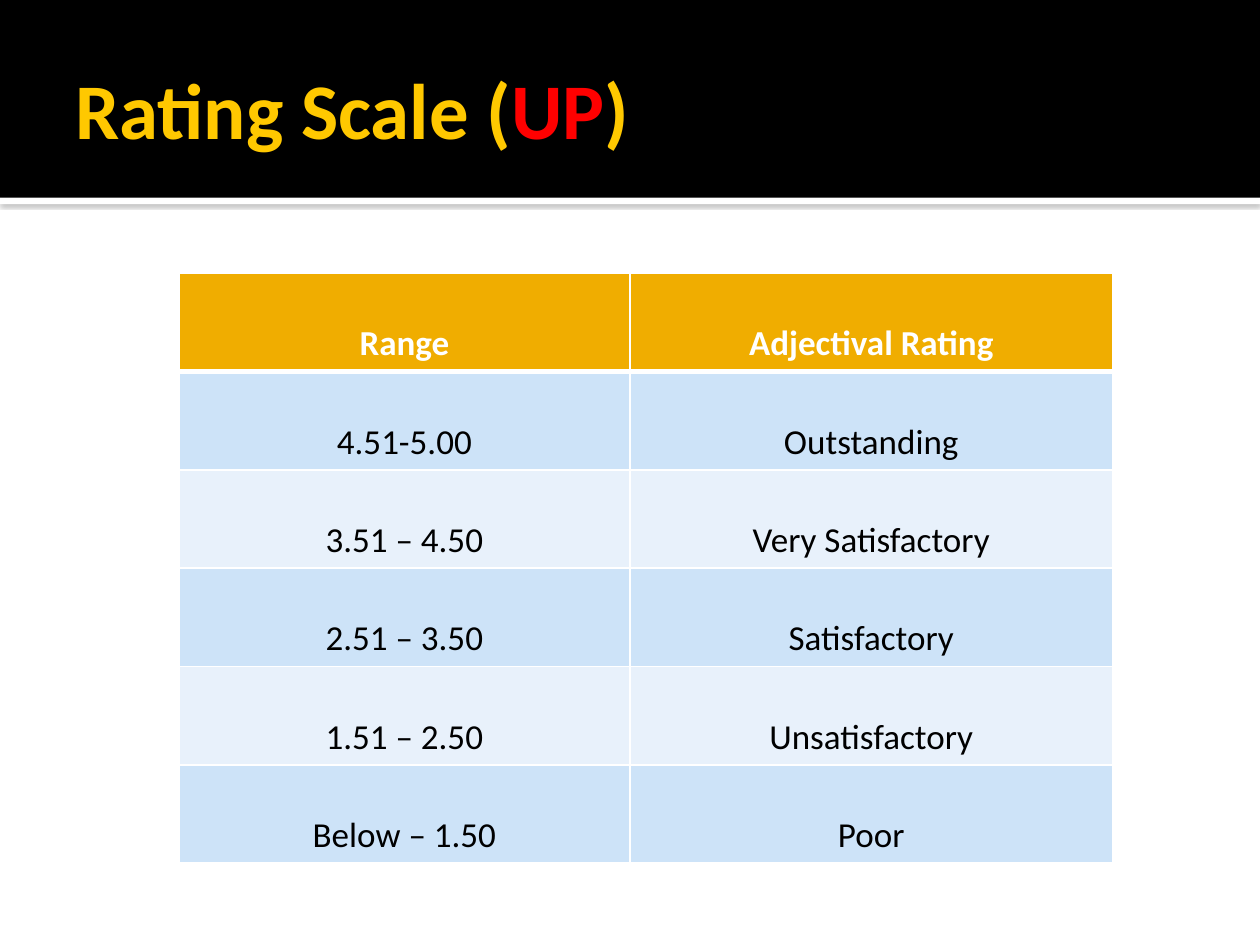
from dataclasses import dataclass

from lxml.etree import SubElement
from pptx import Presentation
from pptx.dml.color import RGBColor
from pptx.enum.shapes import MSO_SHAPE
from pptx.enum.text import MSO_ANCHOR, PP_ALIGN
from pptx.oxml.ns import qn
from pptx.util import Inches, Pt


@dataclass(frozen=True)
class Theme:
    font: str = "Calibri"
    title_size: int = 45
    cell_size: int = 20
    white: str = "FFFFFF"
    black: str = "000000"
    title: str = "FFC800"
    accent: str = "FF0000"
    header: str = "F0AD00"
    bands: tuple = ("CDE3F8", "E8F1FB")
    shadow: str = "808080"


THEME = Theme()
RATINGS = [
    ("Range", "Adjectival Rating"),
    ("4.51-5.00", "Outstanding"),
    ("3.51 – 4.50", "Very Satisfactory"),
    ("2.51 – 3.50", "Satisfactory"),
    ("1.51 – 2.50", "Unsatisfactory"),
    ("Below – 1.50", "Poor"),
]


def rgb(value):
    """Return the colour for a hex string."""
    return RGBColor.from_string(value)


def set_font(font, size, color, bold):
    """Apply the theme font with a size, colour and weight."""
    font.name = THEME.font
    font.size = Pt(size)
    font.color.rgb = rgb(color)
    font.bold = bold


def add_color(parent, color):
    """Append an RGB colour element and return it."""
    return SubElement(parent, qn("a:srgbClr"), val=color)


def add_band(slide, top, height, color):
    """Add a full-width rectangle without outline or shadow."""
    sp = slide.shapes.add_shape(
        MSO_SHAPE.RECTANGLE, 0, Inches(top), Inches(10), Inches(height))
    sp.shadow.inherit = False
    sp.fill.solid()
    sp.fill.fore_color.rgb = rgb(color)
    sp.line.fill.background()
    return sp


def add_shadow(sp):
    """Give a shape a soft shadow falling downwards."""
    effects = sp._element.spPr.find(qn("a:effectLst"))
    shadow = SubElement(
        effects, qn("a:outerShdw"), blurRad=str(Pt(2.5)), dist=str(Pt(0.8)),
        dir="5400000", algn="tl", rotWithShape="0")
    SubElement(add_color(shadow, THEME.shadow), qn("a:alpha"), val="60000")


def add_title(slide, parts):
    """Add the heading from (text, colour) parts."""
    box = slide.shapes.add_textbox(
        Inches(0.5), Inches(0.17), Inches(9), Inches(1.37))
    tf = box.text_frame
    tf.word_wrap = True
    tf.vertical_anchor = MSO_ANCHOR.MIDDLE
    tf.margin_right = Inches(0.05)
    p = tf.paragraphs[0]
    for text, color in parts:
        r = p.add_run()
        r.text = text
        set_font(r.font, THEME.title_size, color, True)


def set_borders(cell, top, bottom):
    """Draw white cell borders with the given top and bottom widths."""
    tc_pr = cell._tc.get_or_add_tcPr()
    for side, width in (("L", 1), ("R", 1), ("T", top), ("B", bottom)):
        ln = SubElement(tc_pr, qn(f"a:ln{side}"), w=str(Pt(width)))
        add_color(SubElement(ln, qn("a:solidFill")), THEME.white)


def fill_cell(cell, text, row):
    """Write and style one cell according to its row."""
    is_header = row == 0
    set_borders(cell, 3 if row == 1 else 1, 3 if is_header else 1)
    cell.fill.solid()
    cell.fill.fore_color.rgb = rgb(
        THEME.header if is_header else THEME.bands[(row - 1) % 2])
    cell.vertical_anchor = MSO_ANCHOR.BOTTOM
    cell.text = text
    p = cell.text_frame.paragraphs[0]
    p.alignment = PP_ALIGN.CENTER
    set_font(p.font, THEME.cell_size,
             THEME.white if is_header else THEME.black, is_header)


def add_rating_table(slide, rows, widths, row_height):
    """Add the rating table with a header and banded rows."""
    table = slide.shapes.add_table(
        len(rows), len(widths), Inches(1.42), Inches(2.17),
        Inches(sum(widths)), Inches(row_height * len(rows))).table
    for column, width in zip(table.columns, widths):
        column.width = Inches(width)
    for i, texts in enumerate(rows):
        table.rows[i].height = Inches(row_height)
        for j, text in enumerate(texts):
            fill_cell(table.cell(i, j), text, i)


def main():
    """Build the rating scale slide."""
    prs = Presentation()
    prs.slide_width, prs.slide_height = Inches(10), Inches(7.5)
    slide = prs.slides.add_slide(prs.slide_layouts[6])
    add_shadow(add_band(slide, 1.57, 0.05, THEME.white))
    add_band(slide, 0, 1.57, THEME.black)
    add_title(slide, [("Rating Scale (", THEME.title), ("UP", THEME.accent),
                      (")", THEME.title)])
    add_rating_table(slide, RATINGS, (3.58, 3.83), 0.78)
    prs.save("out.pptx")


if __name__ == "__main__":
    main()
